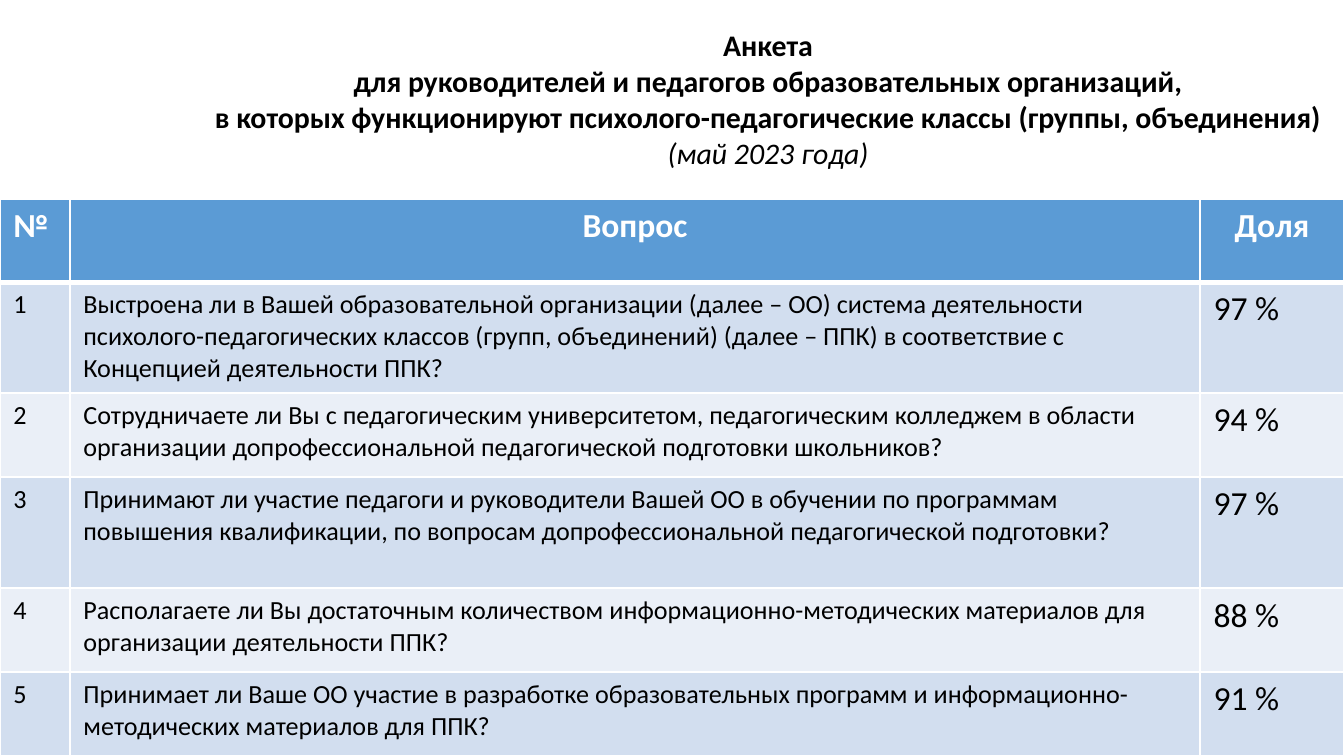
from dataclasses import dataclass

from lxml import etree
from pptx import Presentation
from pptx.dml.color import RGBColor
from pptx.enum.text import MSO_ANCHOR, MSO_AUTO_SIZE, PP_ALIGN
from pptx.oxml.ns import qn
from pptx.util import Pt

LEFT, CENTER = PP_ALIGN.LEFT, PP_ALIGN.CENTER
TOP = MSO_ANCHOR.TOP
NO_AUTOFIT = MSO_AUTO_SIZE.NONE
TITLE_ONLY = 5


@dataclass(frozen=True)
class Theme:
    """Colours, type sizes and line widths of the slide."""

    font: str = "Calibri"
    text: str = "000000"
    light: str = "FFFFFF"
    header: str = "5B9BD5"
    bands: tuple = ("D2DEEF", "EAEFF7")
    title_size: int = 16
    large_size: int = 18
    body_size: int = 14
    thin_line: int = 1
    thick_line: int = 3


THEME = Theme()
TITLE_LINES = [
    "Анкета",
    "для руководителей и педагогов образовательных организаций,",
    "в которых функционируют психолого-педагогические классы (группы, объединения)",
    "(май 2023 года)",
]
HEADINGS = ["№", "Вопрос", "Доля"]
COLUMN_WIDTHS = [37.5, 605.5, 77]
ROW_HEIGHTS = [44.5, 59.5, 45, 59.5, 45, 45]
ANSWERS = [
    ("Выстроена ли в Вашей образовательной организации (далее – ОО) система деятельности "
     "психолого-педагогических классов (групп, объединений) (далее – ППК) в соответствие с "
     "Концепцией деятельности ППК?", 97),
    ("Сотрудничаете ли Вы с педагогическим университетом, педагогическим колледжем в области "
     "организации допрофессиональной педагогической подготовки школьников?", 94),
    ("Принимают ли участие педагоги и руководители Вашей ОО в обучении по программам "
     "повышения квалификации, по вопросам допрофессиональной педагогической подготовки?", 97),
    ("Располагаете ли Вы достаточным количеством информационно-методических материалов для "
     "организации деятельности ППК?", 88),
    ("Принимает ли Ваше ОО участие в разработке образовательных программ и "
     "информационно-методических материалов для ППК?", 91),
]


def style_paragraph(paragraph, size, color, alignment=LEFT, bold=False, italic=False):
    """Set the alignment and font of a paragraph."""
    paragraph.alignment = alignment
    font = paragraph.font
    font.name, font.size = THEME.font, Pt(size)
    font.bold, font.italic = bold, italic
    font.color.rgb = RGBColor.from_string(color)


def fill_title(title):
    """Place the title and set its lines, the last one in italics."""
    title.left, title.top, title.width, title.height = Pt(103), Pt(10.8), Pt(617), Pt(87)
    frame = title.text_frame
    frame.word_wrap = True
    frame.auto_size = NO_AUTOFIT
    frame.vertical_anchor = TOP
    frame.text = "\n".join(TITLE_LINES)
    for paragraph in frame.paragraphs:
        is_date = paragraph.text == TITLE_LINES[-1]
        style_paragraph(paragraph, THEME.title_size, THEME.text, CENTER, not is_date, is_date)


def set_borders(cell, top, bottom):
    """Draw light borders round a cell with the given top and bottom widths."""
    properties = cell._tc.get_or_add_tcPr()
    widths = {"a:lnL": THEME.thin_line, "a:lnR": THEME.thin_line, "a:lnT": top, "a:lnB": bottom}
    for tag, width in widths.items():
        line = etree.SubElement(properties, qn(tag), w=str(Pt(width)))
        fill = etree.SubElement(line, qn("a:solidFill"))
        etree.SubElement(fill, qn("a:srgbClr"), val=THEME.light)


def fill_cell(cell, text, fill, size, color=THEME.text, alignment=LEFT, bold=False):
    """Write and format one table cell."""
    cell.text = text
    cell.fill.solid()
    cell.fill.fore_color.rgb = RGBColor.from_string(fill)
    style_paragraph(cell.text_frame.paragraphs[0], size, color, alignment, bold)


def add_survey_table(slide):
    """Add the table of questions and shares."""
    shape = slide.shapes.add_table(
        len(ROW_HEIGHTS), len(COLUMN_WIDTHS),
        Pt(0), Pt(106.7), Pt(sum(COLUMN_WIDTHS)), Pt(sum(ROW_HEIGHTS)))
    table = shape.table
    for column, width in zip(table.columns, COLUMN_WIDTHS):
        column.width = Pt(width)
    for index, (row, height) in enumerate(zip(table.rows, ROW_HEIGHTS)):
        row.height = Pt(height)
        top = THEME.thick_line if index == 1 else THEME.thin_line
        bottom = THEME.thick_line if index == 0 else THEME.thin_line
        for cell in row.cells:
            set_borders(cell, top, bottom)
    for column, heading in enumerate(HEADINGS):
        fill_cell(table.cell(0, column), heading, THEME.header, THEME.large_size,
                  THEME.light, CENTER if column else LEFT, True)
    for number, (question, share) in enumerate(ANSWERS, 1):
        band = THEME.bands[(number - 1) % 2]
        fill_cell(table.cell(number, 0), str(number), band, THEME.body_size)
        fill_cell(table.cell(number, 1), question, band, THEME.body_size)
        fill_cell(table.cell(number, 2), f"{share} %", band, THEME.large_size)


def main():
    """Build and save the survey slide."""
    presentation = Presentation()
    presentation.slide_width, presentation.slide_height = Pt(720), Pt(405)
    slide = presentation.slides.add_slide(presentation.slide_layouts[TITLE_ONLY])
    fill_title(slide.shapes.title)
    add_survey_table(slide)
    presentation.save("out.pptx")


if __name__ == "__main__":
    main()
